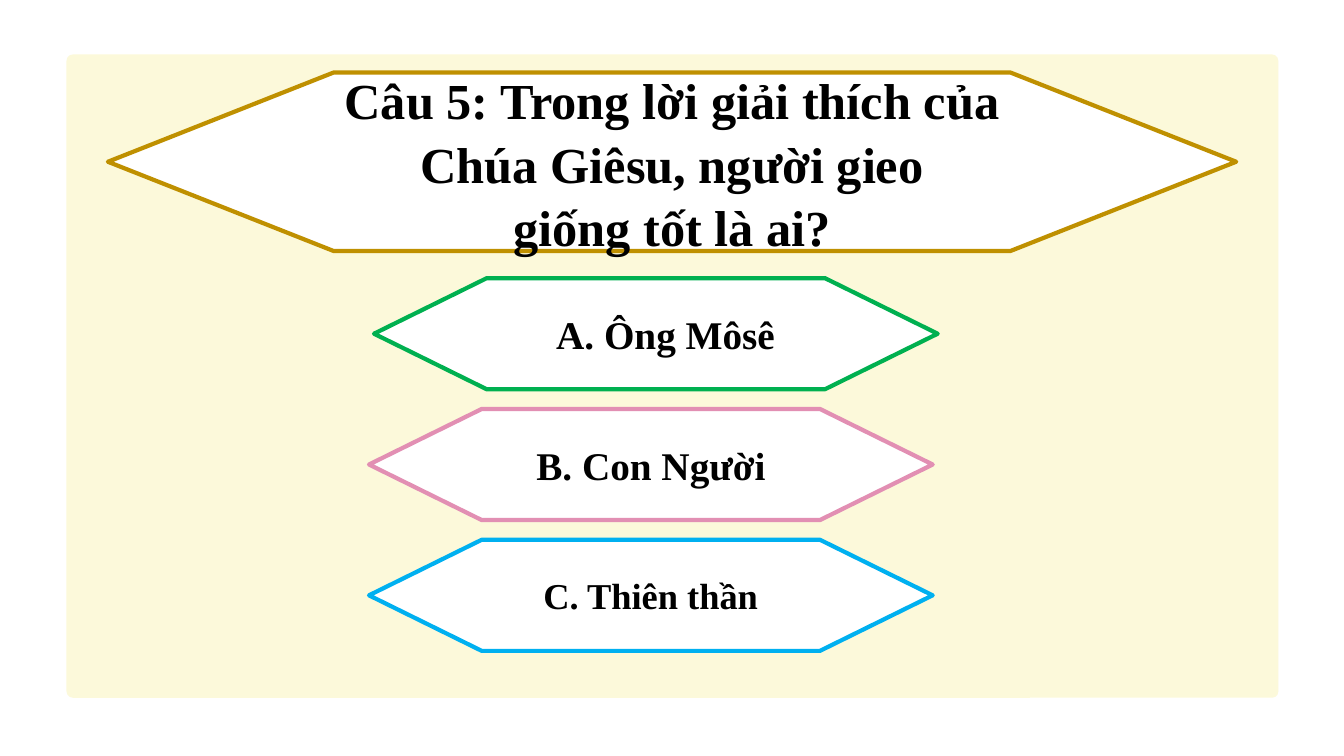
from pptx import Presentation
from pptx.dml.color import RGBColor
from pptx.enum.shapes import MSO_SHAPE
from pptx.enum.text import MSO_ANCHOR, MSO_AUTO_SIZE, PP_ALIGN
from pptx.util import Inches, Pt

WIDTH, HEIGHT = Inches(13.33), Inches(7.5)
COLUMN, ROW = WIDTH / 100, HEIGHT / 100
FONT = "Times New Roman"
QUESTION_BOX = (8.03, 9.6, 83.95, 23.6)
QUESTION = ["Câu 5: Trong lời giải thích của Chúa Giêsu, người gieo", "giống tốt là ai?"]
ANSWERS = [
    ("A. Ông Môsê", "00B050", 28, 27.83, Inches(0.29)),
    ("B. Con Người", "E28FB3", 28, 27.46, Inches(0.1)),
    ("C. Thiên thần", "00B0F0", 26, 27.46, Inches(0.1)),
]
ANSWER_TOP, ANSWER_STEP, ANSWER_WIDTH, ANSWER_HEIGHT = 36.8, 17.3, 41.94, 14.7


def color(hex_code):
    """Turn a hex string into a colour."""
    return RGBColor.from_string(hex_code)


def grid(left, top, width, height):
    """Turn columns and rows into a position and a size."""
    return round(left * COLUMN), round(top * ROW), round(width * COLUMN), round(height * ROW)


def add_panel(slide, box, fill):
    """Add the softly rounded background panel."""
    panel = slide.shapes.add_shape(MSO_SHAPE.ROUNDED_RECTANGLE, *grid(*box))
    panel.adjustments[0] = 0.01
    panel.shadow.inherit = False
    panel.fill.solid()
    panel.fill.fore_color.rgb = color(fill)
    panel.line.fill.background()


def add_hexagon(slide, box, outline):
    """Add a white hexagon with a coloured outline."""
    hexagon = slide.shapes.add_shape(MSO_SHAPE.FLOWCHART_PREPARATION, *grid(*box))
    hexagon.shadow.inherit = False
    hexagon.fill.solid()
    hexagon.fill.fore_color.rgb = color("FFFFFF")
    hexagon.line.color.rgb = color(outline)
    hexagon.line.width = Pt(3)
    return hexagon


def write(shape, lines, size, spacing=1.0):
    """Write bold centred paragraphs into a shape."""
    frame = shape.text_frame
    frame.text = "\n".join(lines)
    frame.word_wrap = True
    frame.auto_size = MSO_AUTO_SIZE.NONE
    frame.vertical_anchor = MSO_ANCHOR.MIDDLE
    for paragraph in frame.paragraphs:
        paragraph.alignment = PP_ALIGN.CENTER
        paragraph.line_spacing = spacing
        for run in paragraph.runs:
            run.font.name = FONT
            run.font.size = Pt(size)
            run.font.bold = True
            run.font.color.rgb = color("000000")


def add_question(slide):
    """Add the question hexagon with the slide title inside it."""
    hexagon = add_hexagon(slide, QUESTION_BOX, "BF9000")
    left, top, width, height = QUESTION_BOX
    title = slide.shapes.title
    title.left, title.top, title.width, title.height = grid(left + width / 5, top, width * 3 / 5, height)
    write(title, QUESTION, 36, 1.05)
    hexagon.element.addnext(title.element)


def main():
    """Build the quiz slide and save it."""
    presentation = Presentation()
    presentation.slide_width, presentation.slide_height = WIDTH, HEIGHT
    slide = presentation.slides.add_slide(presentation.slide_layouts[5])
    add_panel(slide, (4.95, 7.2, 90.17, 85.1), "FCF9DA")
    add_question(slide)
    for index, (text, outline, size, left, inset) in enumerate(ANSWERS):
        top = ANSWER_TOP + index * ANSWER_STEP
        answer = add_hexagon(slide, (left, top, ANSWER_WIDTH, ANSWER_HEIGHT), outline)
        write(answer, [text], size)
        answer.text_frame.margin_left = inset
    presentation.save("out.pptx")


if __name__ == "__main__":
    main()
